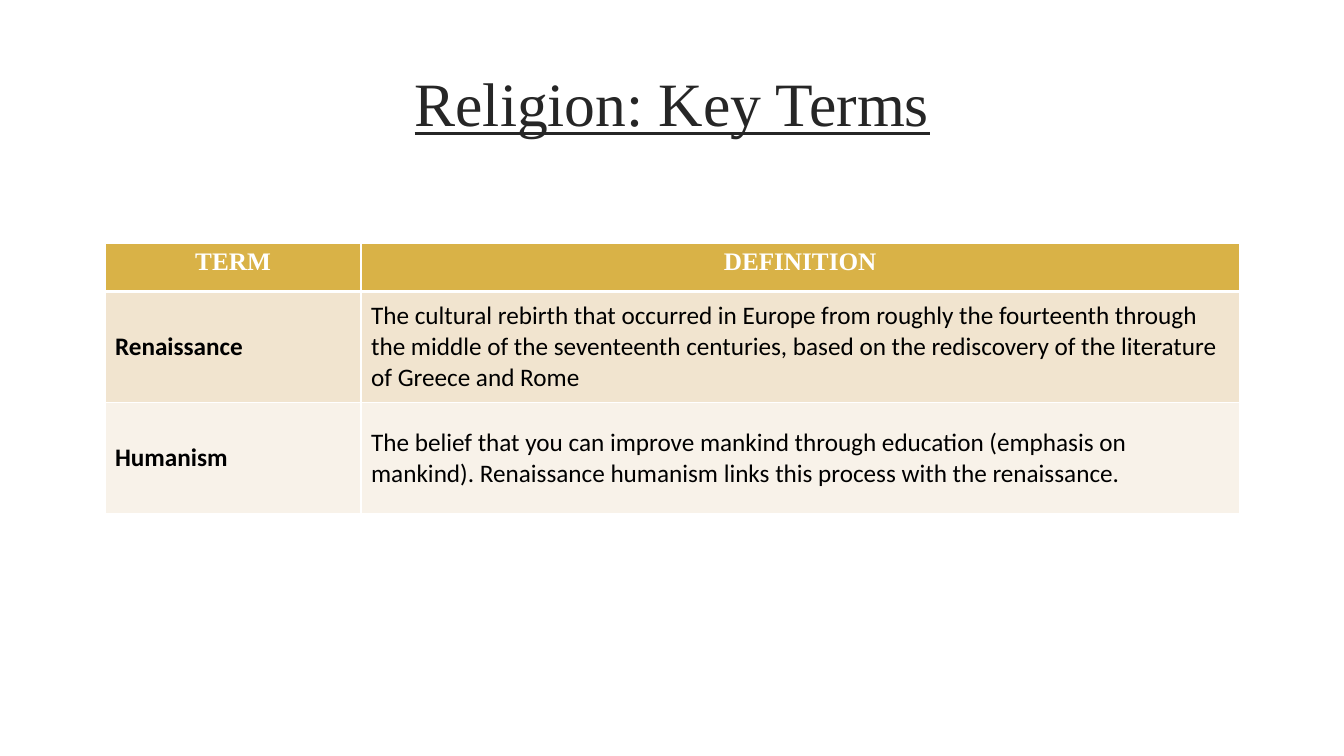
import pptx
import pptx.util
import pptx.dml.color
import pptx.enum.text
import pptx.oxml
import pptx.oxml.ns

Pt = pptx.util.Pt
ALIGN = pptx.enum.text.PP_ALIGN
ANCHOR = pptx.enum.text.MSO_ANCHOR

HEADING = "Religion: Key Terms"
TERMS = [
    ("TERM", "DEFINITION"),
    ("Renaissance", "The cultural rebirth that occurred in Europe from roughly the fourteenth "
     "through the middle of the seventeenth centuries, based on the rediscovery of the "
     "literature of Greece and Rome"),
    ("Humanism", "The belief that you can improve mankind through education (emphasis on "
     "mankind). Renaissance humanism links this process with the renaissance."),
]
COLORS = {"heading": "262626", "white": "FFFFFF", "black": "000000",
          "gold": "D9B247", "sand": "F1E4CF", "cream": "F8F2E9"}
ROW_FILLS = ["gold", "sand", "cream"]
COLUMN_WIDTHS = [182.9, 627.3]
ROW_HEIGHTS = [34.7, 79.3, 79.3]
TABLE_LEFT, TABLE_TOP = 75, 173.5
HEADING_BOX = {"left": Pt(102.2), "top": Pt(37.4), "width": Pt(756), "height": Pt(51.1)}
HEADING_FRAME = {"vertical_anchor": ANCHOR.TOP, "margin_top": Pt(9), "margin_bottom": Pt(0),
                 "word_wrap": True}
HEADING_FONT = {"name": "Times New Roman", "size": Pt(44), "underline": True, "bold": False}
HEADER_FONT = {"name": "Times New Roman", "size": Pt(18), "bold": True}
TERM_FONT = {"name": "Calibri", "size": Pt(18), "bold": True}
DEFINITION_FONT = {**TERM_FONT, "bold": False}


def apply(target, values):
    for key, value in values.items():
        setattr(target, key, value)


def color(name):
    return pptx.dml.color.RGBColor.from_string(COLORS[name])


def style(paragraph, font, color_name, alignment):
    paragraph.alignment = alignment
    apply(paragraph.font, font)
    paragraph.font.color.rgb = color(color_name)


def add_borders(cell, widths):
    properties = cell._tc.get_or_add_tcPr()
    for position, (side, width) in enumerate(widths.items()):
        properties.insert(position, pptx.oxml.parse_xml(
            f'<a:ln{side} {pptx.oxml.ns.nsdecls("a")} w="{Pt(width)}"><a:solidFill>'
            f'<a:srgbClr val="{COLORS["white"]}"/></a:solidFill></a:ln{side}>'))


deck = pptx.Presentation()
apply(deck, {"slide_width": Pt(960), "slide_height": Pt(540)})
slide = deck.slides.add_slide(deck.slide_layouts[5])

heading = slide.shapes.title
apply(heading, HEADING_BOX)
apply(heading.text_frame, HEADING_FRAME)
heading.text_frame.text = HEADING
style(heading.text_frame.paragraphs[0], HEADING_FONT, "heading", ALIGN.CENTER)

terms = slide.shapes.add_table(
    len(TERMS), len(COLUMN_WIDTHS), Pt(TABLE_LEFT), Pt(TABLE_TOP),
    Pt(sum(COLUMN_WIDTHS)), Pt(sum(ROW_HEIGHTS))).table
for column, width in zip(terms.columns, COLUMN_WIDTHS):
    column.width = Pt(width)
for row, height in zip(terms.rows, ROW_HEIGHTS):
    row.height = Pt(height)

for r, entry in enumerate(TERMS):
    header = r == 0
    for c, wording in enumerate(entry):
        cell = terms.cell(r, c)
        cell.text = wording
        cell.vertical_anchor = ANCHOR.TOP if header else ANCHOR.MIDDLE
        cell.fill.solid()
        cell.fill.fore_color.rgb = color(ROW_FILLS[r])
        font = HEADER_FONT if header else (TERM_FONT, DEFINITION_FONT)[c]
        style(cell.text_frame.paragraphs[0], font, "white" if header else "black",
              ALIGN.CENTER if header else ALIGN.LEFT)
        add_borders(cell, {"L": 1, "R": 1, "T": 3 if r == 1 else 1, "B": 3 if header else 1})

deck.save("out.pptx")
